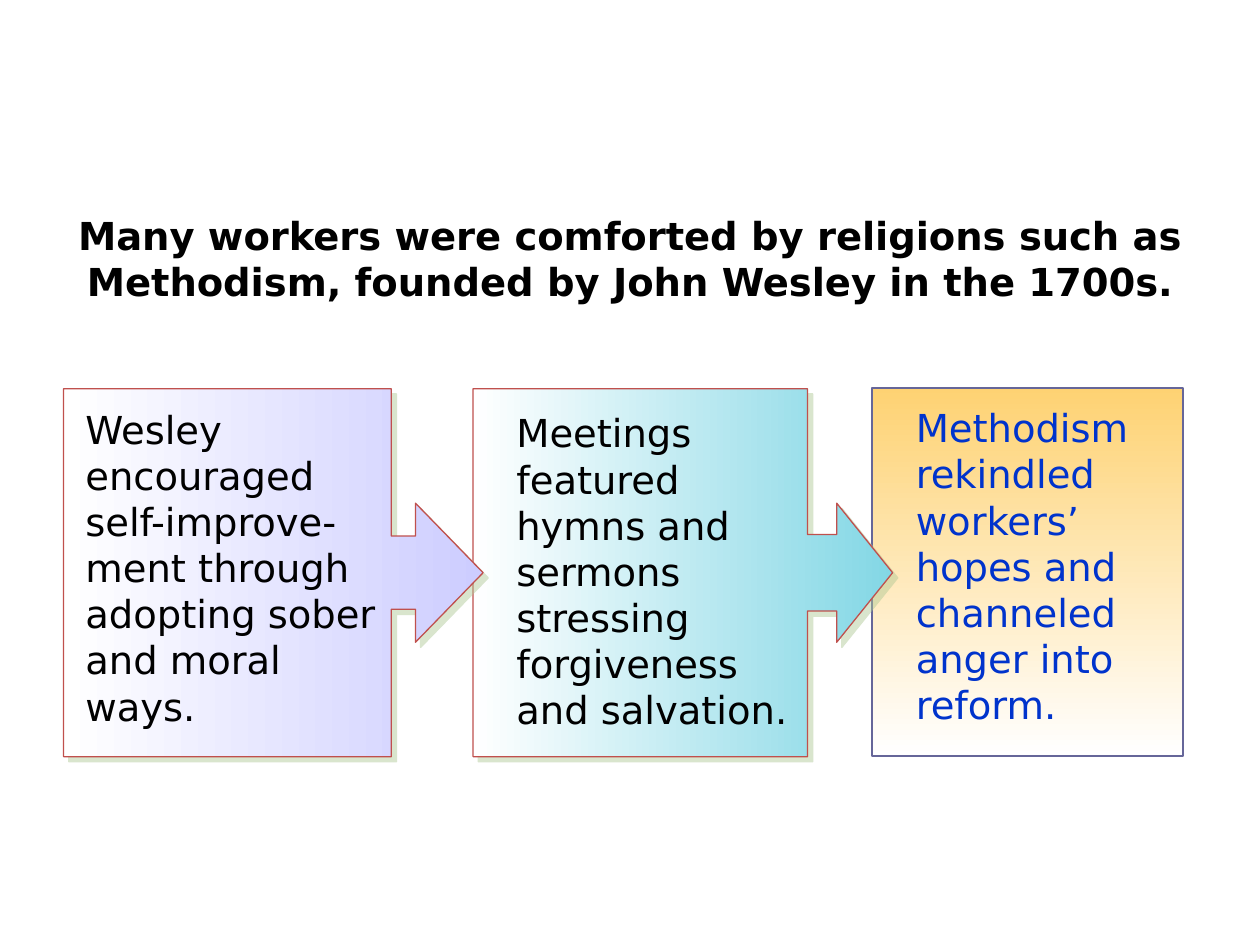
from lxml import etree
from pptx import Presentation
from pptx.dml.color import RGBColor
from pptx.enum.shapes import MSO_SHAPE
from pptx.enum.text import MSO_AUTO_SIZE, PP_ALIGN
from pptx.oxml.ns import qn
from pptx.util import Inches, Pt

RECT = MSO_SHAPE.RECTANGLE
CALLOUT = MSO_SHAPE.UP_ARROW_CALLOUT
GROW = MSO_AUTO_SIZE.SHAPE_TO_FIT_TEXT
LEFT, CENTER = PP_ALIGN.LEFT, PP_ALIGN.CENTER

FONT = "DejaVu Sans"
COLORS = {
    "text": "000000",
    "blue": "0033CC",
    "gold": "FED273",
    "teal": "83D7E5",
    "lilac": "CDCDFF",
    "white": "FFFFFF",
    "red_line": "C0504D",
    "slate_line": "666699",
    "shadow": "ADC793",
}


def rgb(name):
    return RGBColor.from_string(COLORS[name])


def add_text(shapes, text, box, color="text", size=22, bold=False, align=LEFT):
    tb = shapes.add_textbox(*map(Inches, box))
    tf = tb.text_frame
    tf.word_wrap = True
    tf.auto_size = GROW
    p = tf.paragraphs[0]
    p.alignment = align
    r = p.add_run()
    r.text = text
    r.font.name = FONT
    r.font.size = Pt(size)
    r.font.bold = bold
    r.font.color.rgb = rgb(color)


def add_panel(shapes, kind, box, fill, line):
    sp = shapes.add_shape(kind, *map(Inches, box))
    sp.shadow.inherit = False
    sp.fill.gradient()
    sp.fill.gradient_angle = 270
    for stop, name, position in zip(sp.fill.gradient_stops, (fill, "white"), (0, 1)):
        stop.color.rgb = rgb(name)
        stop.position = position
    sp.line.color.rgb = rgb(line)
    sp.line.width = Pt(0.75)
    return sp


def add_shadow(sp):
    effects = sp._element.spPr.find(qn("a:effectLst"))
    shadow = etree.SubElement(effects, qn("a:outerShdw"), blurRad="0",
                              dist=str(Pt(4.2)), dir="2700000",
                              algn="ctr", rotWithShape="0")
    color = etree.SubElement(shadow, qn("a:srgbClr"), val=COLORS["shadow"])
    etree.SubElement(color, qn("a:alpha"), val="46000")


def add_arrow_panel(shapes, left, height, fill, adjustments):
    sp = add_panel(shapes, CALLOUT, (left, 2.88, 2.92, height), fill, "red_line")
    for i, value in enumerate(adjustments):
        sp.adjustments[i] = value
    sp.rotation = 90
    sp._element.spPr.find(qn("a:xfrm")).set("flipH", "1")
    add_shadow(sp)


def main():
    prs = Presentation()
    prs.slide_width, prs.slide_height = Inches(10), Inches(7.5)
    s = prs.slides.add_slide(prs.slide_layouts[6])

    result = s.shapes.add_group_shape().shapes
    add_panel(result, RECT, (6.92, 3.08, 2.47, 2.92), "gold", "slate_line")
    add_text(result, "Methodism rekindled workers’ hopes and channeled anger into reform.",
             (7.17, 3.16, 2.08, 2.66), color="blue")

    steps = [
        (3.96, "teal", (0.208, 0.189, 0.152, 0.797), (4, 3.2, 2.42, 2.66),
         "Meetings featured hymns and sermons stressing forgiveness and salvation."),
        (0.71, "lilac", (0.199, 0.189, 0.184, 0.781), (0.58, 3.17, 2.64, 2.66),
         "Wesley encouraged self-improve-ment through adopting sober and moral ways."),
    ]
    for left, fill, adjustments, box, text in steps:
        step = s.shapes.add_group_shape().shapes
        add_arrow_panel(step, left, 3.33, fill, adjustments)
        add_text(step, text, box)

    add_text(s.shapes, "Many workers were comforted by religions such as Methodism, "
             "founded by John Wesley in the 1700s.",
             (0.5, 1.63, 9, 0.83), bold=True, align=CENTER)
    prs.save("out.pptx")


if __name__ == "__main__":
    main()
